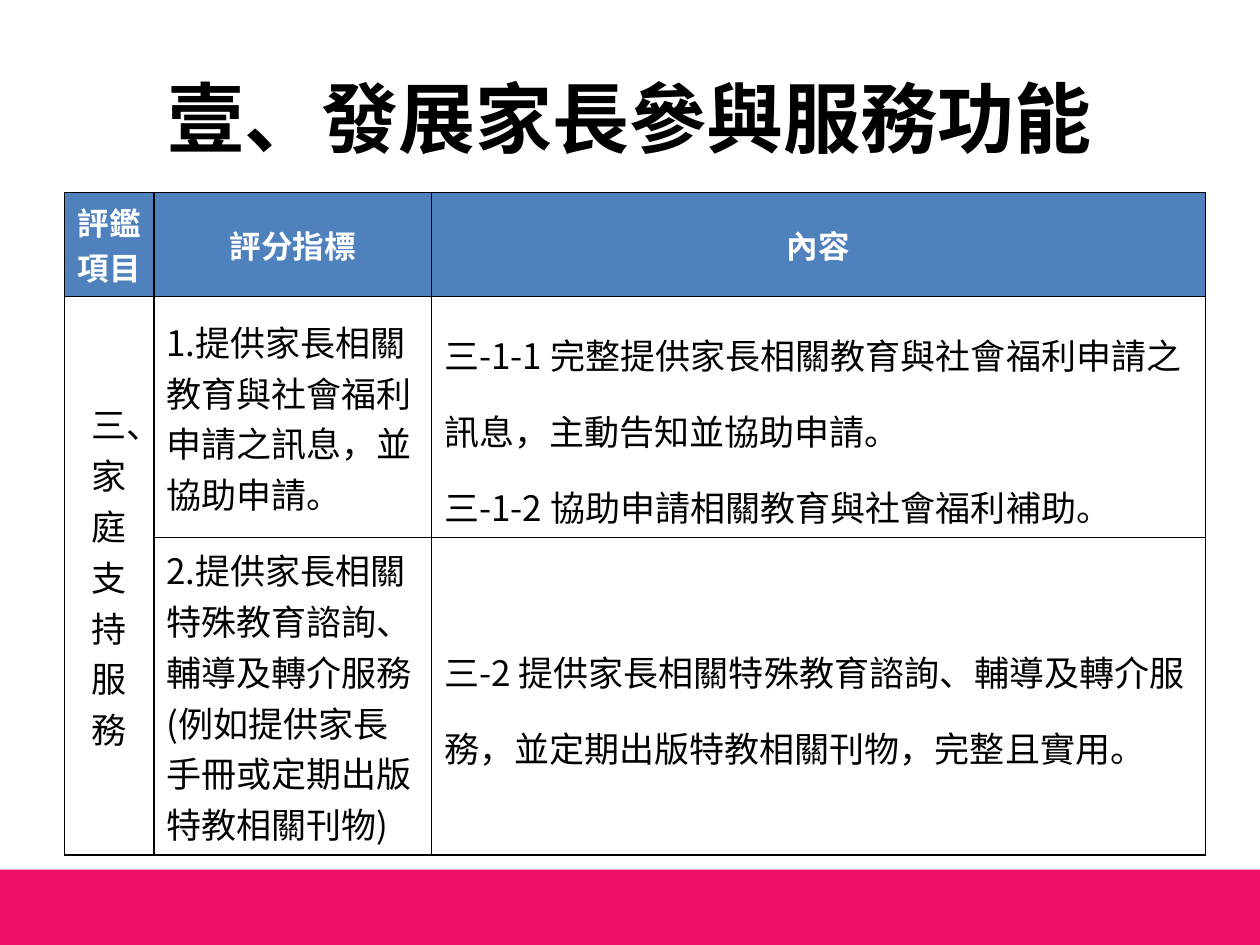
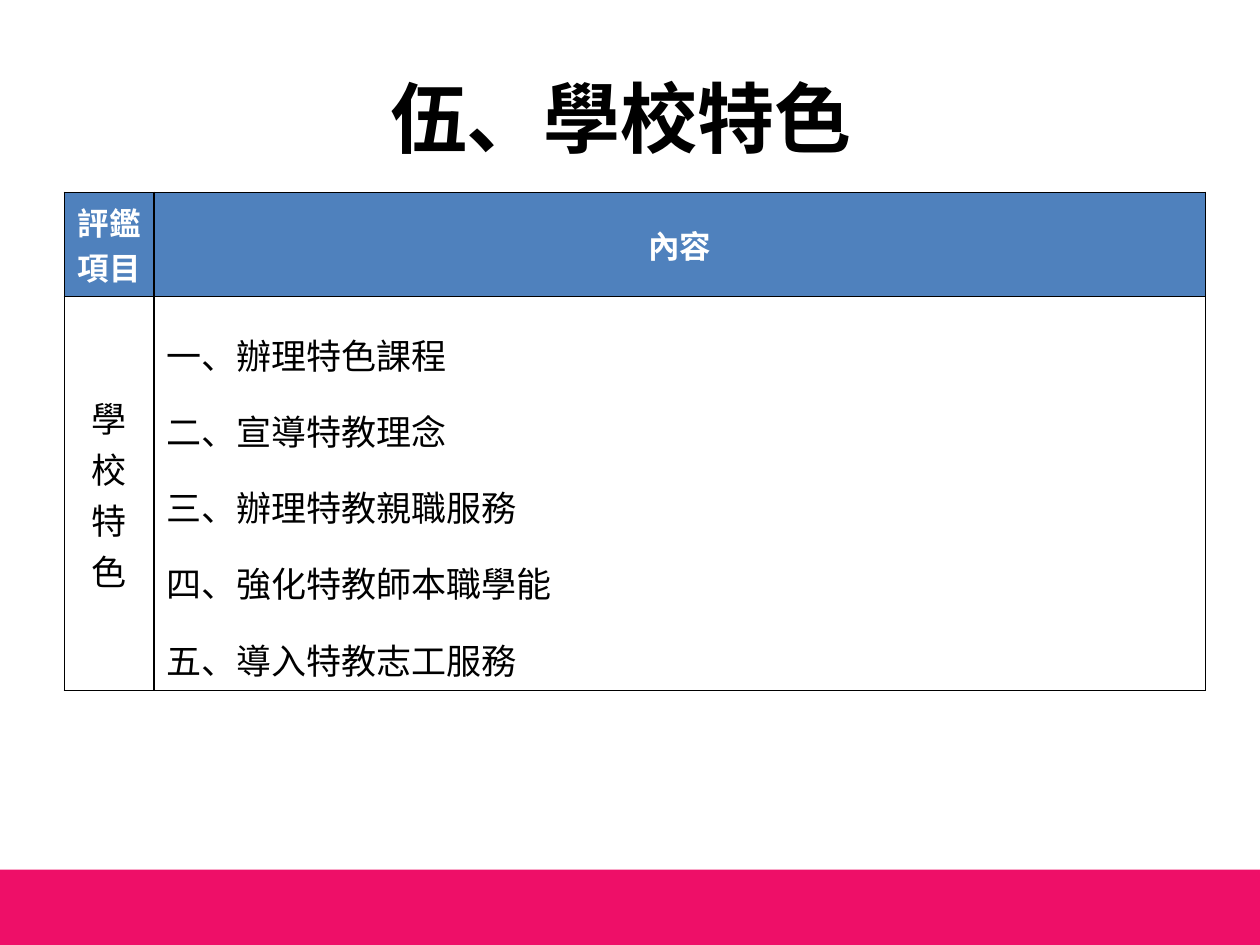
from dataclasses import dataclass
from typing import Any

from lxml import etree
from pptx import Presentation
from pptx import util as u
from pptx.dml.color import RGBColor
from pptx.enum import shapes, text
from pptx.oxml import ns

BLACK = RGBColor(0x00, 0x00, 0x00)
WHITE = RGBColor(0xFF, 0xFF, 0xFF)
HEADER_BLUE = RGBColor(0x4F, 0x81, 0xBD)
BAND_PINK = RGBColor(0xEE, 0x0F, 0x68)
FONT = "Noto Sans CJK SC"
SLIDE_WIDTH, SLIDE_HEIGHT = u.Cm(25.4), u.Cm(19.05)
BAND_HEIGHT = u.Cm(1.52)
TABLE_LEFT, TABLE_TOP = u.Cm(1.3), u.Cm(3.88)
BORDER_WIDTH = u.Pt(1)
CENTER, LEFT = text.PP_ALIGN.CENTER, text.PP_ALIGN.LEFT
MIDDLE, TOP = text.MSO_ANCHOR.MIDDLE, text.MSO_ANCHOR.TOP


@dataclass(frozen=True)
class Style:
    font: dict[str, Any]
    paragraph: dict[str, Any]
    anchor: text.MSO_ANCHOR = MIDDLE
    fill: RGBColor = WHITE
    color: RGBColor = BLACK
    vertical: bool = False


@dataclass(frozen=True)
class Entry:
    style: Style
    lines: tuple[str, ...]
    rows: int = 1


@dataclass(frozen=True)
class Page:
    title: str
    widths: tuple[float, ...]
    heights: tuple[float, ...]
    grid: tuple[tuple[Entry | None, ...], ...]


HEADING_FONT = {"size": u.Pt(18), "bold": True}
BODY_FONT = {"size": u.Pt(20), "bold": False}
TITLE = Style({"size": u.Pt(44), "bold": True}, {"alignment": CENTER})
HEADING = Style(HEADING_FONT, {"alignment": CENTER}, fill=HEADER_BLUE, color=WHITE)
ITEM_HEADING = Style(HEADING_FONT, {"alignment": CENTER}, TOP, HEADER_BLUE, WHITE)
ITEM = Style(BODY_FONT, {"alignment": CENTER}, vertical=True)
INDICATOR = Style(BODY_FONT, {"alignment": LEFT})
CONTENT = Style(BODY_FONT, {"alignment": LEFT, "line_spacing": 1.5})

ITEM_HEADER = Entry(ITEM_HEADING, ("評鑑項目",))
CONTENT_HEADER = Entry(HEADING, ("內容",))

PAGES = (
    Page(
        "壹、發展家長參與服務功能",
        (1.8, 5.6, 15.6),
        (2.1, 4.86, 6.4),
        (
            (ITEM_HEADER, Entry(HEADING, ("評分指標",)), CONTENT_HEADER),
            (
                Entry(ITEM, ("三、家庭支持服務",), rows=2),
                Entry(INDICATOR, ("1.提供家長相關教育與社會福利申請之訊息，並協助申請。",)),
                Entry(CONTENT, (
                    "三-1-1 完整提供家長相關教育與社會福利申請之訊息，主動告知並協助申請。",
                    "三-1-2 協助申請相關教育與社會福利補助。",
                )),
            ),
            (
                None,
                Entry(INDICATOR, (
                    "2.提供家長相關特殊教育諮詢、輔導及轉介服務(例如提供家長手冊或定期出版特教相關刊物)",
                )),
                Entry(CONTENT, (
                    "三-2 提供家長相關特殊教育諮詢、輔導及轉介服務，並定期出版特教相關刊物，完整且實用。",
                )),
            ),
        ),
    ),
    Page(
        "伍、學校特色 ",
        (1.8, 21.2),
        (2.1, 7.94),
        (
            (ITEM_HEADER, CONTENT_HEADER),
            (
                Entry(ITEM, ("學校特色",)),
                Entry(CONTENT, (
                    "一、辦理特色課程",
                    "二、宣導特教理念",
                    "三、辦理特教親職服務",
                    "四、強化特教師本職學能",
                    "五、導入特教志工服務",
                )),
            ),
        ),
    ),
)


def apply(target: Any, values: dict[str, Any]) -> None:
    for name, value in values.items():
        setattr(target, name, value)


def write_lines(frame: Any, lines: tuple[str, ...], style: Style) -> None:
    for index, line in enumerate(lines):
        paragraph = frame.add_paragraph() if index else frame.paragraphs[0]
        apply(paragraph, style.paragraph)
        run = paragraph.add_run()
        run.text = line
        apply(run.font, {"name": FONT, **style.font})
        run.font.color.rgb = style.color
        east_asian = etree.SubElement(run.font._element, ns.qn("a:ea"))
        east_asian.set("typeface", FONT)


def draw_borders(cell: Any) -> None:
    properties = cell._tc.get_or_add_tcPr()
    for side in ("lnL", "lnR", "lnT", "lnB"):
        line = etree.SubElement(properties, ns.qn(f"a:{side}"), w=str(BORDER_WIDTH))
        solid = etree.SubElement(line, ns.qn("a:solidFill"))
        etree.SubElement(solid, ns.qn("a:srgbClr"), val=str(BLACK))


def fill_cell(cell: Any, entry: Entry | None) -> None:
    draw_borders(cell)
    cell.fill.solid()
    cell.fill.fore_color.rgb = entry.style.fill if entry else WHITE
    if entry is None:
        return
    cell.vertical_anchor = entry.style.anchor
    if entry.style.vertical:
        cell._tc.get_or_add_tcPr().set("vert", "eaVert")
    write_lines(cell.text_frame, entry.lines, entry.style)


def draw_title(slide: Any, title: str) -> None:
    box = slide.shapes.add_textbox(u.Cm(1.27), u.Cm(0.76), u.Cm(22.86), u.Cm(3.18))
    apply(box.text_frame, {"word_wrap": True, "vertical_anchor": TITLE.anchor})
    write_lines(box.text_frame, (title,), TITLE)


def draw_table(slide: Any, page: Page) -> None:
    table = slide.shapes.add_table(
        len(page.heights), len(page.widths), TABLE_LEFT, TABLE_TOP,
        u.Cm(sum(page.widths)), u.Cm(sum(page.heights)),
    ).table
    apply(table, {"first_row": False, "horz_banding": False})
    for column, width in zip(table.columns, page.widths):
        column.width = u.Cm(width)
    for row, height in zip(table.rows, page.heights):
        row.height = u.Cm(height)
    for r, entries in enumerate(page.grid):
        for c, entry in enumerate(entries):
            fill_cell(table.cell(r, c), entry)
            if entry and entry.rows > 1:
                table.cell(r, c).merge(table.cell(r + entry.rows - 1, c))


def draw_band(slide: Any) -> None:
    band = slide.shapes.add_shape(
        shapes.MSO_SHAPE.RECTANGLE, 0, SLIDE_HEIGHT - BAND_HEIGHT, SLIDE_WIDTH, BAND_HEIGHT
    )
    band.shadow.inherit = False
    band.fill.solid()
    band.fill.fore_color.rgb = BAND_PINK
    band.line.fill.background()


def main() -> None:
    deck = Presentation()
    apply(deck, {"slide_width": SLIDE_WIDTH, "slide_height": SLIDE_HEIGHT})
    for page in PAGES:
        slide = deck.slides.add_slide(deck.slide_layouts[6])
        draw_title(slide, page.title)
        draw_table(slide, page)
        draw_band(slide)
    deck.save("out.pptx")


if __name__ == "__main__":
    main()
